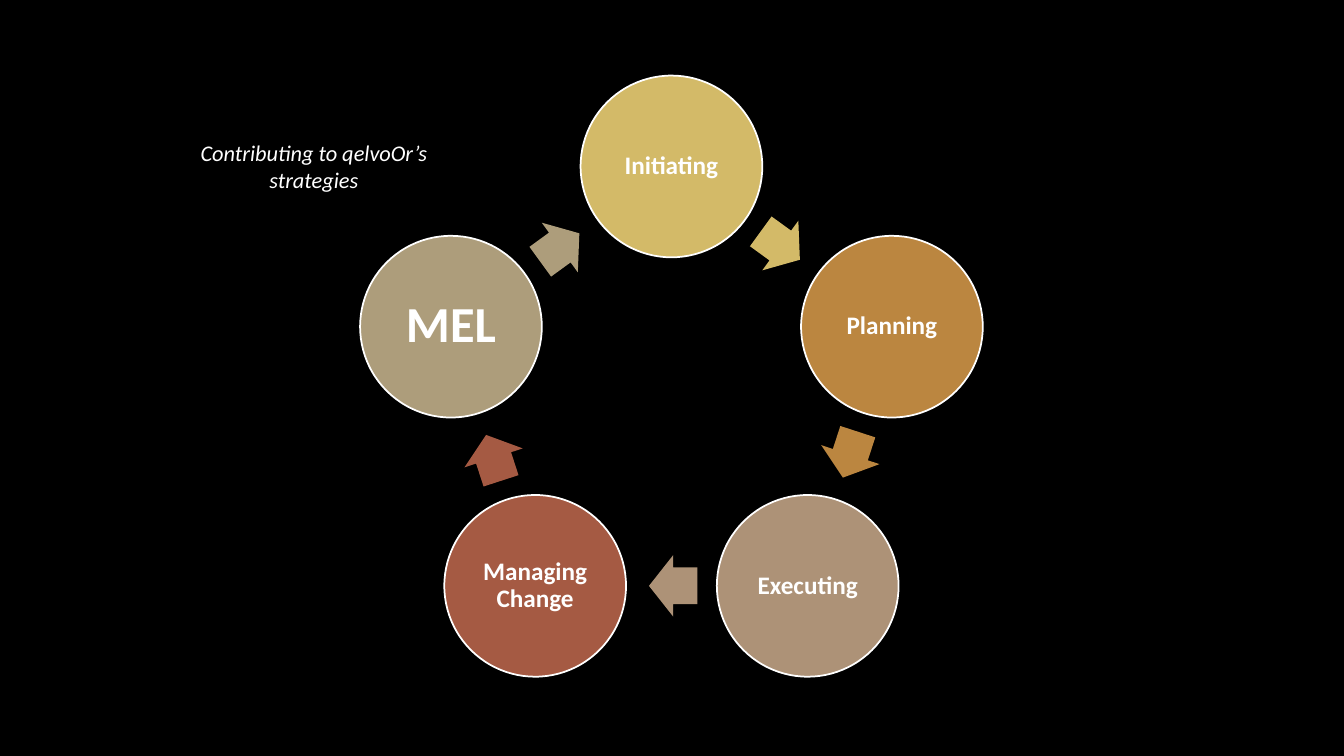
import math

import pptx
import pptx.dml.color
import pptx.enum.shapes
import pptx.enum.text
import pptx.util

Pt = pptx.util.Pt
SHAPES = pptx.enum.shapes.MSO_SHAPE

COLOURS = {
    "background": "000000",
    "white": "FFFFFF",
    "gold": "D3BA68",
    "amber": "BB8640",
    "tan": "AD9277",
    "rust": "A55A43",
    "khaki": "AD9D7B",
}
STAGES = [
    ("Initiating", "gold", 18),
    ("Planning", "amber", 18),
    ("Executing", "tan", 18),
    ("Managing Change", "rust", 18),
    ("MEL", "khaki", 36),
]
CENTRE_X, CENTRE_Y = 479.6, 284.5
RING_RADIUS = 165.6
CIRCLE_SIZE = 129.8
ARROW_LENGTH, ARROW_HEIGHT = 34.5, 43.8
ARROW_SETBACK = 1.2


def rgb(name):
    return pptx.dml.color.RGBColor.from_string(COLOURS[name])


def ring_point(radius, angle):
    """Return the point at an angle in degrees, clockwise from the top."""
    radians = math.radians(angle)
    return CENTRE_X + radius * math.sin(radians), CENTRE_Y - radius * math.cos(radians)


def add_filled_shape(slide, kind, centre, width, height, colour):
    x, y = centre
    shape = slide.shapes.add_shape(
        kind, Pt(x - width / 2), Pt(y - height / 2), Pt(width), Pt(height))
    shape.shadow.inherit = False
    shape.fill.solid()
    shape.fill.fore_color.rgb = rgb(colour)
    shape.line.fill.background()
    return shape


def write_centred(text_frame, text, size, bold=False, italic=False):
    text_frame.word_wrap = True
    text_frame.text = text
    paragraph = text_frame.paragraphs[0]
    paragraph.alignment = pptx.enum.text.PP_ALIGN.CENTER
    font = paragraph.runs[0].font
    font.name = "Calibri"
    font.size = Pt(size)
    font.bold = bold
    font.italic = italic
    font.color.rgb = rgb("white")
    return paragraph


def add_stage(slide, angle, text, colour, size):
    circle = add_filled_shape(slide, SHAPES.OVAL, ring_point(RING_RADIUS, angle),
                              CIRCLE_SIZE, CIRCLE_SIZE, colour)
    circle.line.color.rgb = rgb("white")
    circle.line.width = Pt(1.25)
    frame = circle.text_frame
    frame.vertical_anchor = pptx.enum.text.MSO_ANCHOR.MIDDLE
    frame.margin_left = frame.margin_right = Pt(size / 10)
    frame.margin_top = frame.margin_bottom = Pt(size / 10)
    write_centred(frame, text, size, bold=True).line_spacing = 0.9


def add_arrow(slide, angle, colour):
    """Point along the ring, halfway between two neighbouring stages."""
    half_step = 180 / len(STAGES)
    x, y = ring_point(RING_RADIUS * math.cos(math.radians(half_step)), angle)
    heading = math.radians(angle)
    centre = (x - ARROW_SETBACK * math.cos(heading), y - ARROW_SETBACK * math.sin(heading))
    arrow = add_filled_shape(slide, SHAPES.RIGHT_ARROW, centre,
                             ARROW_LENGTH, ARROW_HEIGHT, colour)
    arrow.adjustments[0] = 0.6
    arrow.adjustments[1] = 0.5
    arrow.rotation = angle


def add_caption(slide, text):
    caption = slide.shapes.add_textbox(Pt(118), Pt(95.8), Pt(212.4), Pt(46))
    write_centred(caption.text_frame, text, 16, italic=True)


def main():
    presentation = pptx.Presentation()
    presentation.slide_width = Pt(960)
    presentation.slide_height = Pt(540)
    slide = presentation.slides.add_slide(presentation.slide_layouts[6])
    slide.background.fill.solid()
    slide.background.fill.fore_color.rgb = rgb("background")

    step = 360 / len(STAGES)
    for index, (text, colour, size) in enumerate(STAGES):
        add_stage(slide, index * step, text, colour, size)
        add_arrow(slide, (index + 0.5) * step, colour)
    add_caption(slide, "Contributing to qelvoOr’s strategies")

    presentation.save("out.pptx")


if __name__ == "__main__":
    main()
